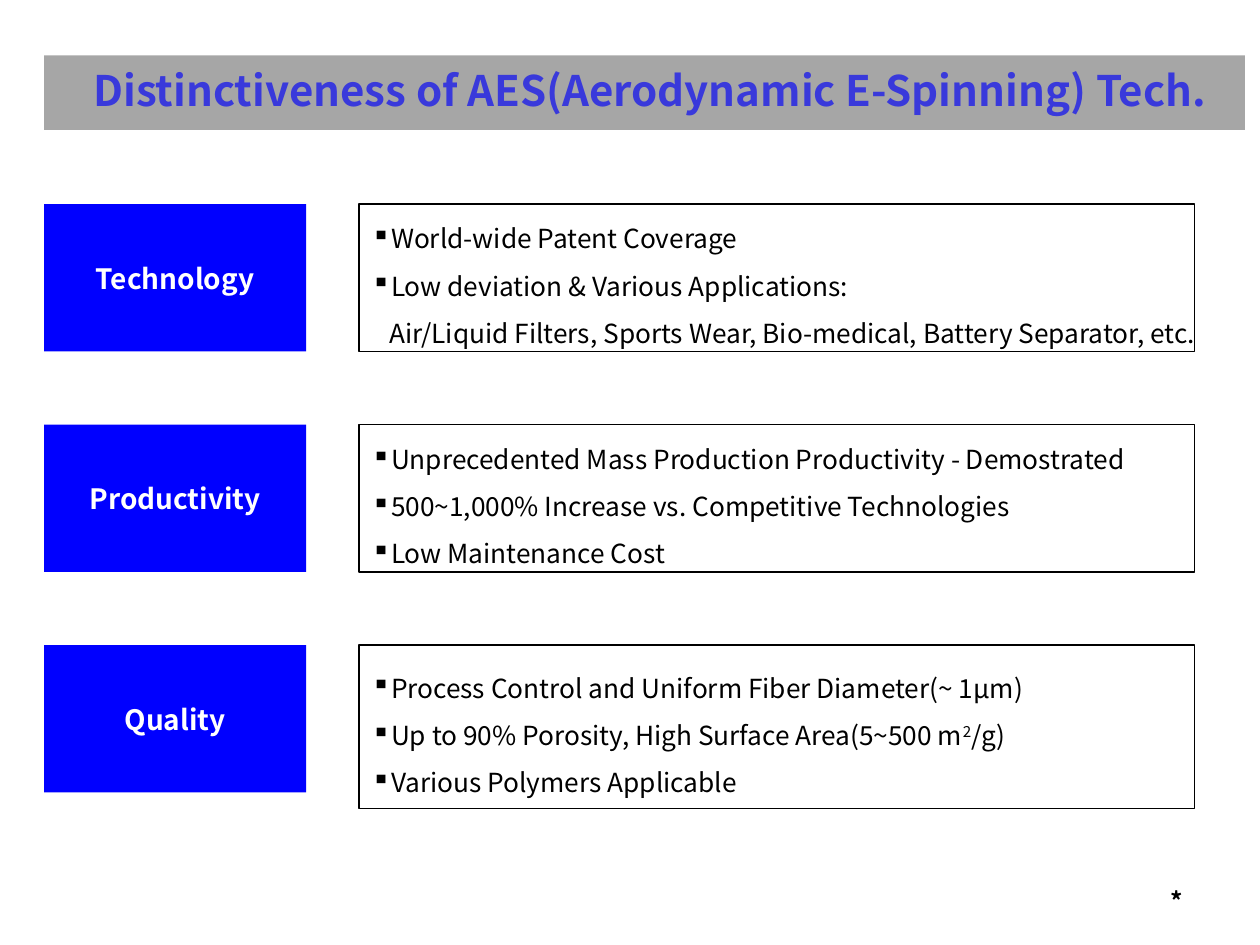
from lxml import etree
from pptx import Presentation
from pptx.dml.color import RGBColor
from pptx.enum.shapes import MSO_SHAPE
from pptx.enum.text import MSO_ANCHOR, MSO_AUTO_SIZE, PP_ALIGN
from pptx.oxml.ns import qn
from pptx.util import Inches, Pt

RECTANGLE = MSO_SHAPE.RECTANGLE
MIDDLE = MSO_ANCHOR.MIDDLE
NO_AUTOFIT = MSO_AUTO_SIZE.NONE
LEFT, CENTER, RIGHT = PP_ALIGN.LEFT, PP_ALIGN.CENTER, PP_ALIGN.RIGHT

BLACK = RGBColor(0, 0, 0)
WHITE = RGBColor(255, 255, 255)
BLUE = RGBColor(0, 0, 255)
TITLE_BLUE = RGBColor(0x39, 0x39, 0xDB)
BAND_GRAY = RGBColor(0xA6, 0xA6, 0xA6)

FONT = "Noto Sans CJK KR"
TITLE_FONT = {"name": FONT, "size": Pt(24), "bold": True}
LABEL_FONT = {"name": FONT, "size": Pt(16), "bold": True}
POINT_FONT = {"name": FONT, "size": Pt(15), "bold": False}
MARK_FONT = {"name": FONT, "size": Pt(14), "bold": True}

LABEL_LEFT, LABEL_WIDTH = 0.35, 2.08
DETAIL_LEFT, DETAIL_WIDTH = 2.85, 6.63
FIRST_ROW_TOP, ROW_STEP, ROW_HEIGHT = 1.62, 1.75, 1.17
QUALITY_HEIGHT = 1.3
BULLET_INDENT, CONTINUED_INDENT = 0.11, 0.14

# Each point is (bulleted, text parts); every second part is superscript.
STRENGTHS = [
    ("Technology", ROW_HEIGHT, [
        (True, ["World-wide Patent Coverage"]),
        (True, ["Low deviation & Various Applications:"]),
        (False, ["Air/Liquid Filters, Sports Wear, Bio-medical, "
                 "Battery Separator, etc."]),
    ]),
    ("Productivity", ROW_HEIGHT, [
        (True, ["Unprecedented Mass Production Productivity - Demostrated"]),
        (True, ["500~1,000% Increase vs. Competitive Technologies"]),
        (True, ["Low Maintenance Cost"]),
    ]),
    ("Quality", QUALITY_HEIGHT, [
        (True, ["Process Control and Uniform Fiber Diameter(~ 1µm)"]),
        (True, ["Up to 90% Porosity, High Surface Area(5~500 m", "2", "/g)"]),
        (True, ["Various Polymers Applicable"]),
    ]),
]


def apply_font(font, font_format, color):
    for attribute, value in font_format.items():
        setattr(font, attribute, value)
    font.color.rgb = color


def write_line(frame, text, font_format, color, alignment):
    frame.vertical_anchor = MIDDLE
    paragraph = frame.paragraphs[0]
    paragraph.alignment = alignment
    run = paragraph.add_run()
    run.text = text
    apply_font(run.font, font_format, color)
    return paragraph


def add_panel(slide, left, top, width, height, fill):
    panel = slide.shapes.add_shape(
        RECTANGLE, *map(Inches, (left, top, width, height)))
    panel.shadow.inherit = False
    panel.fill.solid()
    panel.fill.fore_color.rgb = fill
    panel.line.fill.background()
    panel.text_frame.vertical_anchor = MIDDLE
    panel.text_frame.word_wrap = False
    return panel


def indent_point(paragraph, bulleted):
    """Hang the text behind a square bullet, or indent a continued line."""
    properties = paragraph._p.get_or_add_pPr()
    if bulleted:
        indent = Inches(BULLET_INDENT)
        properties.set("marL", str(indent))
        properties.set("indent", str(-indent))
        bullet_color = etree.SubElement(properties, qn("a:buClr"))
        etree.SubElement(bullet_color, qn("a:srgbClr"), val=str(BLACK))
        etree.SubElement(properties, qn("a:buChar"), char="▪")
    else:
        properties.set("marL", str(Inches(CONTINUED_INDENT)))
        properties.set("indent", "0")


def write_points(frame, points):
    for index, (bulleted, parts) in enumerate(points):
        paragraph = frame.add_paragraph() if index else frame.paragraphs[0]
        indent_point(paragraph, bulleted)
        paragraph.alignment = LEFT
        paragraph.line_spacing = 1.5
        for position, part in enumerate(parts):
            run = paragraph.add_run()
            run.text = part
            apply_font(run.font, POINT_FONT, BLACK)
            if position % 2:
                run._r.get_or_add_rPr().set("baseline", "30000")


def add_strength(slide, top, label, detail_height, points):
    label_panel = add_panel(
        slide, LABEL_LEFT, top, LABEL_WIDTH, ROW_HEIGHT, BLUE)
    write_line(label_panel.text_frame, label, LABEL_FONT, WHITE, CENTER)
    detail_panel = add_panel(
        slide, DETAIL_LEFT, top, DETAIL_WIDTH, detail_height, WHITE)
    detail_panel.line.color.rgb = BLACK
    detail_panel.line.width = Pt(0.75)
    write_points(detail_panel.text_frame, points)


def set_title(slide, text):
    title = slide.shapes.title
    title.left, title.top = Inches(LABEL_LEFT), Inches(0.44)
    title.width, title.height = Inches(9.53), Inches(0.59)
    title.fill.solid()
    title.fill.fore_color.rgb = BAND_GRAY
    frame = title.text_frame
    frame.auto_size = NO_AUTOFIT
    frame.margin_left = Inches(0.18)
    paragraph = write_line(frame, text, TITLE_FONT, TITLE_BLUE, CENTER)
    paragraph.line_spacing = 0.9


def add_footer_mark(slide):
    mark = slide.shapes.add_textbox(*map(Inches, (7.16, 6.95, 2.33, 0.4)))
    mark.text_frame.word_wrap = True
    write_line(mark.text_frame, "*", MARK_FONT, BLACK, RIGHT)


def main():
    presentation = Presentation()
    presentation.slide_width, presentation.slide_height = Inches(10), Inches(7.5)
    title_only = presentation.slide_layouts.get_by_name("Title Only")
    slide = presentation.slides.add_slide(title_only)
    set_title(slide, "Distinctiveness of AES(Aerodynamic E-Spinning) Tech.")
    for row, strength in enumerate(STRENGTHS):
        add_strength(slide, FIRST_ROW_TOP + row * ROW_STEP, *strength)
    add_footer_mark(slide)
    presentation.save("out.pptx")


if __name__ == "__main__":
    main()
